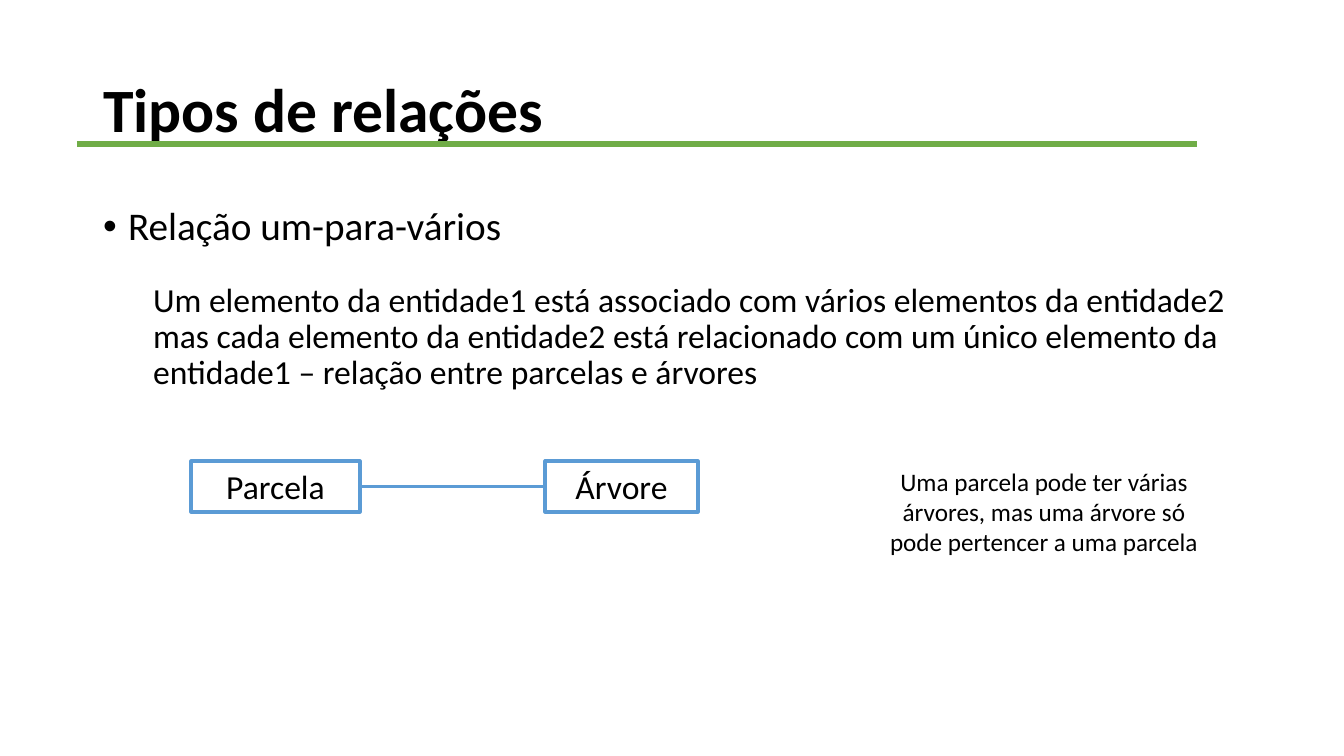
from lxml.etree import SubElement
from pptx import Presentation
from pptx.dml.color import RGBColor
from pptx.enum.shapes import MSO_CONNECTOR, MSO_SHAPE
from pptx.enum.text import MSO_ANCHOR, PP_ALIGN
from pptx.oxml.ns import qn
from pptx.util import Emu, Pt

BLACK, WHITE, BLUE, GREEN = "000000", "FFFFFF", "5B9BD5", "70AD47"
PX = 914400 / 100.8


def px(*lengths):
    return [Emu(round(length * PX)) for length in lengths]


def paint(target, color):
    if hasattr(target, "solid"):
        target.solid()
        target = target.fore_color
    target.rgb = RGBColor.from_string(color)


prs = Presentation()
prs.slide_width, prs.slide_height = px(1344, 756)
slide = prs.slides.add_slide(prs.slide_layouts[1])
shapes = slide.shapes

# Title and body
heading, explanation = shapes.title, slide.placeholders[1]
for holder, box in ((heading, (93, 40, 1159, 146)), (explanation, (93, 202, 1159, 480))):
    holder.left, holder.top, holder.width, holder.height = px(*box)
heading.text_frame.text = "Tipos de relações"
heading.text_frame.vertical_anchor = MSO_ANCHOR.MIDDLE
explanation.text_frame.text = (
    "Relação um-para-vários\n"
    "Um elemento da entidade1 está associado com vários elementos da entidade2 "
    "mas cada elemento da entidade2 está relacionado com um único elemento da "
    "entidade1 – relação entre parcelas e árvores"
)
topic, definition = explanation.text_frame.paragraphs
definition.level = 1

# Bullet on the topic, plain indent on the definition
for paragraph, margin, indent, bullet in ((topic, 25, -25, "•"), (definition, 50, 0, None)):
    properties = paragraph._p.get_or_add_pPr()
    for name, length in {"marL": margin, "indent": indent}.items():
        properties.set(name, str(round(length * PX)))
    if bullet:
        SubElement(properties, qn("a:buChar"), char=bullet)
    else:
        SubElement(properties, qn("a:buNone"))

# Entities
entities = []
for entity_name, left, width in (("Parcela", 191, 169), ("Árvore", 545, 153)):
    entity = shapes.add_shape(MSO_SHAPE.RECTANGLE, *px(left, 461, width, 51))
    entity.shadow.inherit = False
    paint(entity.fill, WHITE)
    paint(entity.line.fill, BLUE)
    entity.line.width = Pt(2.25)
    entity.text_frame.text = entity_name
    entities.append(entity)
parcel, tree = entities

# Note on the relation
note = shapes.add_textbox(*px(867, 461, 354, 102))
note.text_frame.word_wrap = True
note.text_frame.text = (
    "Uma parcela pode ter várias árvores, mas uma árvore só pode pertencer a uma parcela"
)

# Relation line and title rule
for start, end, color, weight in (
    ((360, 486), (545, 486), BLUE, 2.25),
    ((77, 144), (1197, 144), GREEN, 4.5),
):
    rule = shapes.add_connector(MSO_CONNECTOR.STRAIGHT, *px(*start, *end))
    paint(rule.line.fill, color)
    rule.line.width = Pt(weight)
    SubElement(rule._element.spPr, qn("a:effectLst"))
    if color == BLUE:
        rule.begin_connect(parcel, 3)
        rule.end_connect(tree, 1)

# Text formats
centred = {"alignment": PP_ALIGN.CENTER}
formats = (
    (heading.text_frame.paragraphs[0], 44, True,
     {"alignment": PP_ALIGN.LEFT, "line_spacing": 0.9}),
    (topic, 28, False, {"line_spacing": 0.9, "space_before": Pt(10)}),
    (definition, 24, False, {"line_spacing": 0.9, "space_before": Pt(24)}),
    (parcel.text_frame.paragraphs[0], 24, False, centred),
    (tree.text_frame.paragraphs[0], 24, False, centred),
    (note.text_frame.paragraphs[0], 18, False, centred),
)
for paragraph, size, bold, layout in formats:
    for name, value in layout.items():
        setattr(paragraph, name, value)
    font = paragraph.runs[0].font
    for name, value in {"name": "Calibri", "size": Pt(size), "bold": bold}.items():
        setattr(font, name, value)
    paint(font.fill, BLACK)

prs.save("out.pptx")
